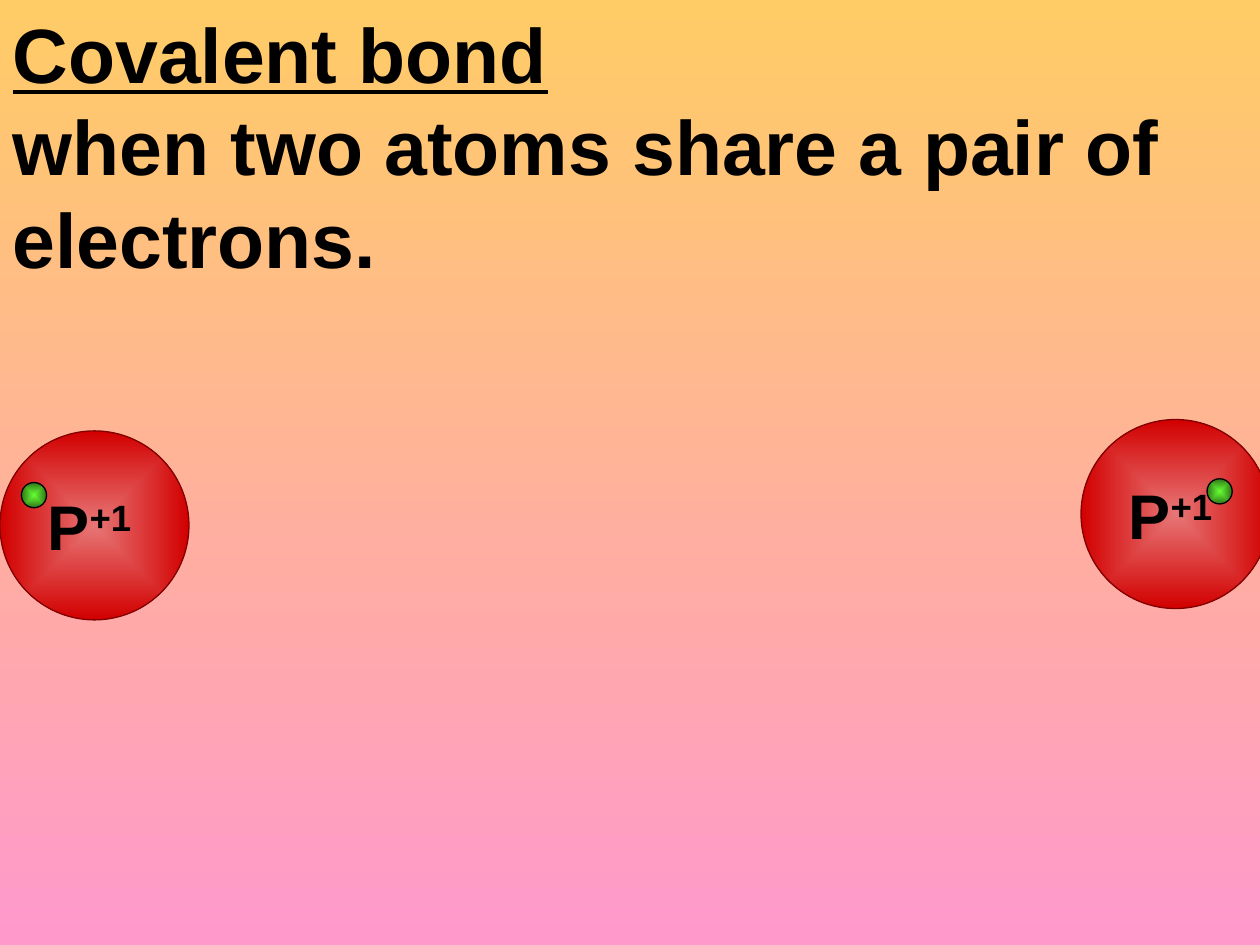
from lxml import etree
from pptx import Presentation
from pptx.dml.color import RGBColor
from pptx.enum.shapes import MSO_SHAPE
from pptx.enum.text import MSO_ANCHOR as Anchor, MSO_AUTO_SIZE as AutoSize, PP_ALIGN as Align
from pptx.oxml.ns import qn
from pptx.util import Inches, Pt

BLACK = RGBColor(0x00, 0x00, 0x00)
MAROON = RGBColor(0x80, 0x00, 0x00)
BACKGROUND = RGBColor(0xFF, 0xCC, 0x66), RGBColor(0xFF, 0x99, 0xCC)
NUCLEUS = RGBColor(0xE7, 0x76, 0x76), RGBColor(0xD2, 0x00, 0x00)
ELECTRON = RGBColor(0x66, 0xFF, 0x33), RGBColor(0x2F, 0x76, 0x18)


def add_text(p, text, size=36, underline=False, superscript=False):
    r = p.add_run()
    r.text = text
    font = r.font
    font.name, font.size, font.bold = "Arial", Pt(size), True
    font.underline = underline
    font.color.rgb = BLACK
    if superscript:
        font._element.set("baseline", "30000")


def set_gradient(fill, colors):
    """Two colours, running from top to bottom."""
    fill.gradient()
    fill.gradient_angle = 270
    for stop, color, position in zip(fill.gradient_stops, colors, (0, 1)):
        stop.color.rgb = color
        stop.position = position


def make_radial(sp):
    """Run the gradient from the centre of the shape outwards."""
    lin = sp.element.spPr.find(qn("a:gradFill")).find(qn("a:lin"))
    path = etree.Element(qn("a:path"), {"path": "shape"})
    etree.SubElement(path, qn("a:fillToRect"), dict.fromkeys("ltrb", "50000"))
    lin.getparent().replace(lin, path)


def add_ball(slide, left, top, diameter, colors, outline):
    sp = slide.shapes.add_shape(MSO_SHAPE.OVAL, Inches(left), Inches(top),
                                Inches(diameter), Inches(diameter))
    sp.shadow.inherit = False
    set_gradient(sp.fill, colors)
    make_radial(sp)
    sp.line.color.rgb = outline
    sp.line.width = Pt(0.75)
    return sp


def add_nucleus(slide, left, top):
    tf = add_ball(slide, left, top, 1.5, NUCLEUS, MAROON).text_frame
    tf.word_wrap = False
    tf.vertical_anchor = Anchor.MIDDLE
    p = tf.paragraphs[0]
    p.alignment = Align.CENTER
    add_text(p, "P")
    add_text(p, "+1 ", superscript=True)


def add_electron(slide, left, top):
    add_ball(slide, left, top, 0.2, ELECTRON, BLACK)


def set_title(slide):
    title = slide.shapes.title
    title.left, title.top = Inches(0), Inches(0)
    title.width, title.height = Inches(10), Inches(2.3)
    tf = title.text_frame
    tf.word_wrap = True
    tf.auto_size = AutoSize.SHAPE_TO_FIT_TEXT
    tf.vertical_anchor = Anchor.TOP
    heading, definition = tf.paragraphs[0], tf.add_paragraph()
    heading.alignment = definition.alignment = Align.LEFT
    add_text(heading, "Covalent bond", size=44, underline=True)
    add_text(definition, "when two atoms share a pair of electrons.", size=44)


def main():
    prs = Presentation()
    prs.slide_width, prs.slide_height = Inches(10), Inches(7.5)
    slide = prs.slides.add_slide(prs.slide_layouts[5])
    set_gradient(slide.background.fill, BACKGROUND)
    set_title(slide)

    # Left atom
    add_nucleus(slide, 0, 3.42)
    add_electron(slide, 0.17, 3.83)

    # Right atom
    add_nucleus(slide, 8.58, 3.33)
    add_electron(slide, 9.58, 3.8)

    prs.save("out.pptx")


if __name__ == "__main__":
    main()
